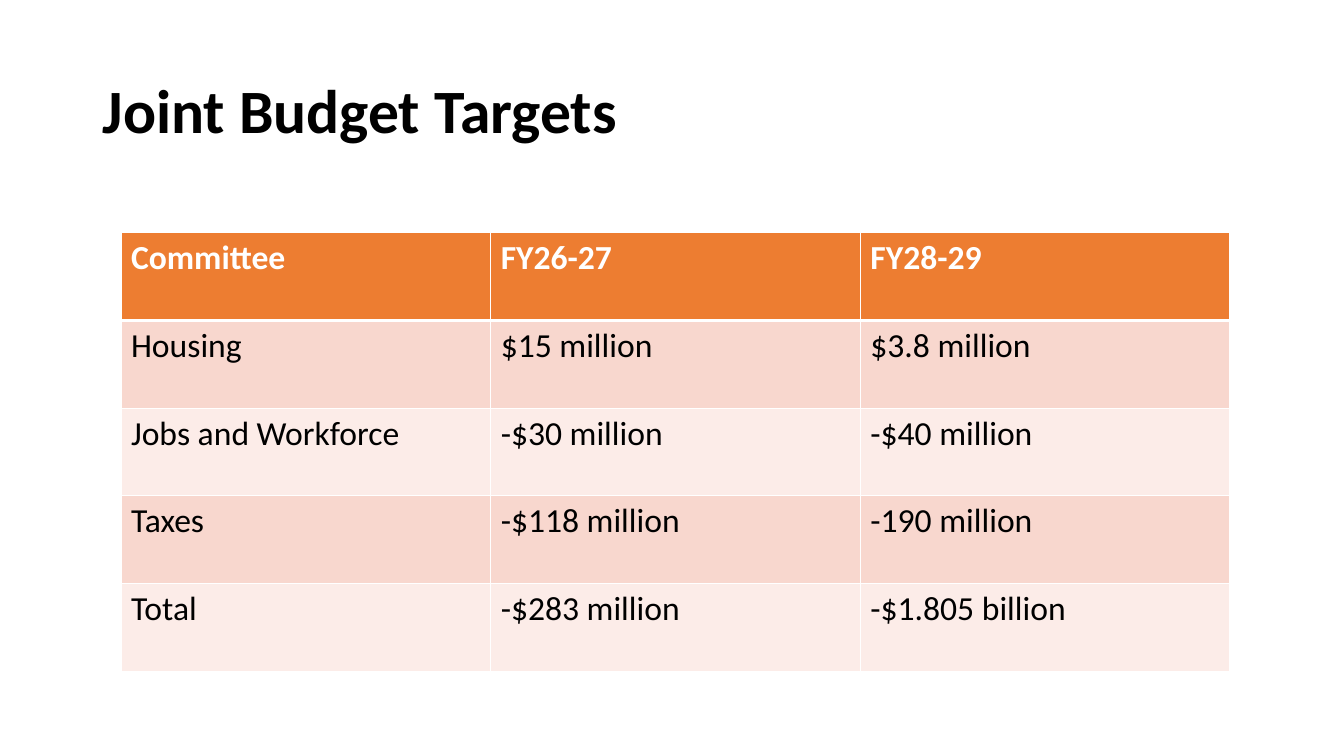
"""Build the Joint Budget Targets slide."""
import lxml.etree
import pptx
import pptx.dml.color
import pptx.enum.text
import pptx.oxml.ns
import pptx.util

Inches = pptx.util.Inches
WHITE, BLACK, ORANGE = "FFFFFF", "000000", "ED7D31"
BANDS = ("F8D7CE", "FCECE8")
BUDGET_TARGETS = [
    ("Committee", "FY26-27", "FY28-29"),
    ("Housing", "$15 million", "$3.8 million"),
    ("Jobs and Workforce", "-$30 million", "-$40 million"),
    ("Taxes", "-$118 million", "-190 million"),
    ("Total", "-$283 million", "-$1.805 billion"),
]


def rgb(code):
    """Turn a hex string into a colour."""
    return pptx.dml.color.RGBColor.from_string(code)


def write(paragraph, wording, size, colour, bold):
    """Add one formatted run to a paragraph."""
    run = paragraph.add_run()
    run.text = wording
    run.font.name = "Calibri"
    run.font.size = pptx.util.Pt(size)
    run.font.bold = bold
    run.font.color.rgb = rgb(colour)


def add_title(slide, wording):
    """Place and fill the title placeholder."""
    title = slide.shapes.title
    title.left, title.top = Inches(0.92), Inches(0.4)
    title.width, title.height = Inches(11.5), Inches(1.45)
    frame = title.text_frame
    frame.word_wrap = True
    frame.vertical_anchor = pptx.enum.text.MSO_ANCHOR.MIDDLE
    heading = frame.paragraphs[0]
    heading.alignment = pptx.enum.text.PP_ALIGN.LEFT
    heading.line_spacing = 0.9
    write(heading, wording, 44, BLACK, True)


def add_border(cell, side, points, colour):
    """Draw a solid border on one side of a cell."""
    qn = pptx.oxml.ns.qn
    properties = cell._tc.get_or_add_tcPr()
    border = lxml.etree.SubElement(properties, qn(f"a:ln{side}"), w=str(pptx.util.Pt(points)))
    fill = lxml.etree.SubElement(border, qn("a:solidFill"))
    lxml.etree.SubElement(fill, qn("a:srgbClr"), val=colour)


def add_targets_table(slide, rows):
    """Add the table with an orange header and banded rows."""
    table = slide.shapes.add_table(
        len(rows), len(rows[0]), Inches(1.2), Inches(2.31), Inches(11), Inches(4.35)
    ).table
    for row_number, row in enumerate(rows):
        header = row_number == 0
        for column_number, wording in enumerate(row):
            cell = table.cell(row_number, column_number)
            for side in "LRTB":
                heavy = (header and side == "B") or (row_number == 1 and side == "T")
                add_border(cell, side, 3 if heavy else 1, WHITE)
            cell.fill.solid()
            cell.fill.fore_color.rgb = rgb(ORANGE if header else BANDS[(row_number - 1) % 2])
            write(cell.text_frame.paragraphs[0], wording, 24, WHITE if header else BLACK, header)


def main():
    """Create the slide and save it."""
    deck = pptx.Presentation()
    deck.slide_width, deck.slide_height = Inches(13.33), Inches(7.5)
    slide = deck.slides.add_slide(deck.slide_layouts[5])
    add_title(slide, "Joint Budget Targets")
    add_targets_table(slide, BUDGET_TARGETS)
    deck.save("out.pptx")


if __name__ == "__main__":
    main()
